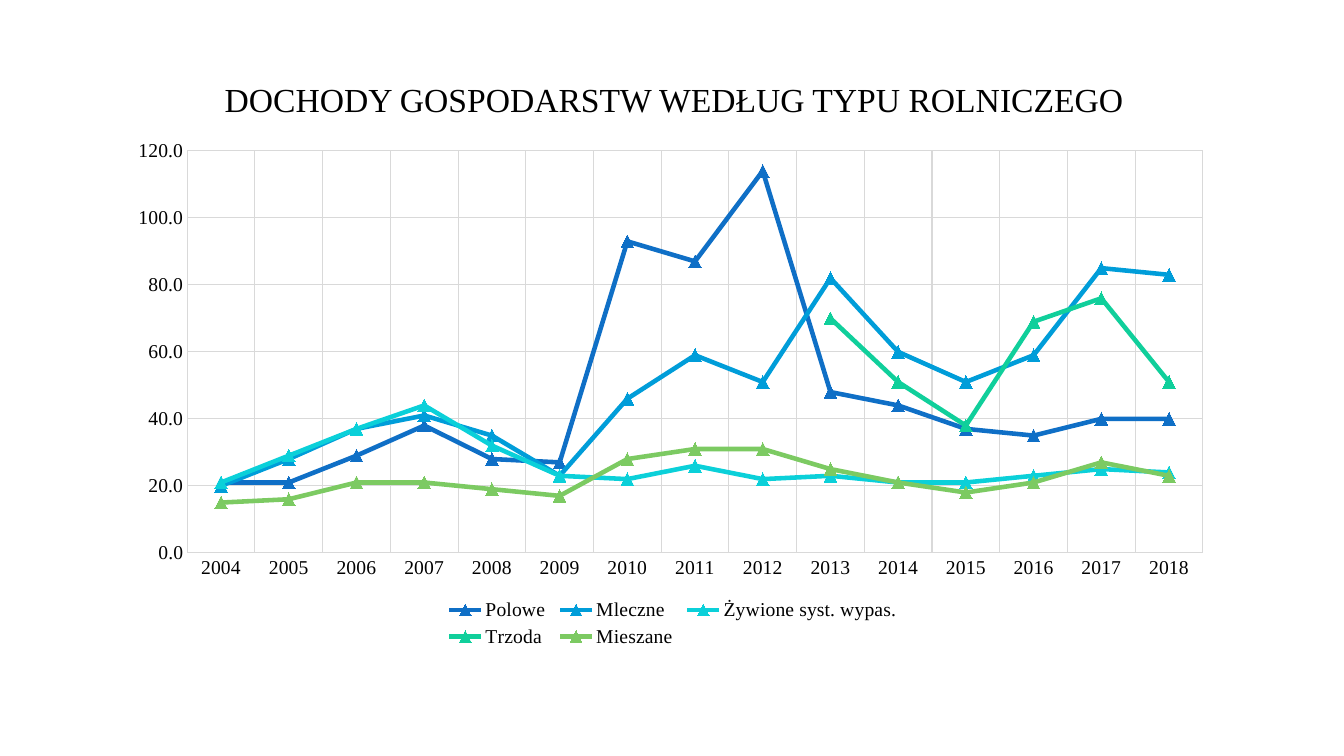
"""Build a slide with a line chart of farm income by type of farming."""
from dataclasses import dataclass

from pptx import Presentation
from pptx.chart.data import CategoryChartData
from pptx.dml.color import RGBColor
from pptx.enum.chart import XL_CHART_TYPE as ChartType
from pptx.enum.chart import XL_LEGEND_POSITION as LegendPosition
from pptx.enum.chart import XL_MARKER_STYLE as MarkerStyle
from pptx.enum.chart import XL_TICK_MARK as TickMark
from pptx.enum.text import MSO_ANCHOR, PP_ALIGN
from pptx.oxml import parse_xml
from pptx.oxml.ns import nsdecls, qn
from pptx.util import Inches, Pt

HEADING = "DOCHODY GOSPODARSTW WEDŁUG TYPU ROLNICZEGO"
YEARS = [str(year) for year in range(2004, 2019)]
INCOMES = {
    "Polowe": (21, 21, 29, 38, 28, 27, 93, 87, 114, 48, 44, 37, 35, 40, 40),
    "Mleczne": (20, 28, 37, 41, 35, 23, 46, 59, 51, 82, 60, 51, 59, 85, 83),
    "Żywione syst. wypas.": (21, 29, 37, 44, 32, 23, 22, 26, 22, 23, 21, 21, 23, 25, 24),
    "Trzoda": (None,) * 9 + (70, 51, 38, 69, 76, 51),
    "Mieszane": (15, 16, 21, 21, 19, 17, 28, 31, 31, 25, 21, 18, 21, 27, 23),
}
SLIDE_SIZE = (13.33, 7.5)
HEADING_BOX = (1.13, 0.73, 10.77, 0.5)
CHART_BOX = (1.2, 1.29, 10.95, 5.18)
PLOT_SHARE = (0.06, 0.04, 0.92, 0.77)
LEGEND_SHARE = (0.29, 0.89, 0.42, 0.11)


@dataclass(frozen=True)
class Theme:
    font: str = "Times New Roman"
    base_font: str = "Cabin"
    text: str = "000000"
    grid: str = "D9D9D9"
    lines: tuple = ("0F6FC6", "009DD9", "0BD0D9", "10CF9B", "7CCA62")
    heading_size: int = 24
    label_size: int = 14
    base_size: int = 10
    grid_width: float = 0.75
    line_width: float = 3.25
    marker_size: int = 9


THEME = Theme()


def set_font(font, size, name=THEME.font):
    font.name, font.size, font.bold = name, Pt(size), False
    font.color.rgb = RGBColor.from_string(THEME.text)


def set_line(line, color, width):
    line.color.rgb = RGBColor.from_string(color)
    line.width = Pt(width)


def place_part(parent, index, share, inner=False):
    for old in parent.findall(qn("c:layout")):
        parent.remove(old)
    target = '<c:layoutTarget val="inner"/>' if inner else ""
    modes = '<c:xMode val="edge"/><c:yMode val="edge"/>'
    sizes = "".join(f'<c:{key} val="{part}"/>' for key, part in zip("xywh", share))
    parent.insert(index, parse_xml(
        f'<c:layout {nsdecls("c")}><c:manualLayout>{target}{modes}{sizes}'
        "</c:manualLayout></c:layout>"))


def add_heading(slide):
    heading = slide.shapes.title
    heading.left, heading.top, heading.width, heading.height = map(Inches, HEADING_BOX)
    frame = heading.text_frame
    frame.margin_left = Inches(0.44)
    frame.vertical_anchor = MSO_ANCHOR.MIDDLE
    paragraph = frame.paragraphs[0]
    paragraph.alignment = PP_ALIGN.CENTER
    run = paragraph.add_run()
    run.text = HEADING
    set_font(run.font, THEME.heading_size)


def style_axes(chart):
    for axis in (chart.category_axis, chart.value_axis):
        axis.major_tick_mark = axis.minor_tick_mark = TickMark.NONE
        axis.has_major_gridlines = True
        set_line(axis.major_gridlines.format.line, THEME.grid, THEME.grid_width)
        set_font(axis.tick_labels.font, THEME.label_size)
    set_line(chart.category_axis.format.line, THEME.grid, THEME.grid_width)
    incomes = chart.value_axis
    incomes.format.line.fill.background()
    incomes.minimum_scale, incomes.maximum_scale, incomes.major_unit = 0, 120, 20
    incomes.tick_labels.number_format = "0.0"
    incomes.tick_labels.number_format_is_linked = False


def add_income_chart(slide):
    data = CategoryChartData()
    data.categories = YEARS
    for farm_type, values in INCOMES.items():
        data.add_series(farm_type, values)
    chart = slide.shapes.add_chart(
        ChartType.LINE_MARKERS, *map(Inches, CHART_BOX), data).chart
    chart.has_title = False
    set_font(chart.font, THEME.base_size, THEME.base_font)
    style_axes(chart)
    chart.plots[0].vary_by_categories = False
    for series, color in zip(chart.plots[0].series, THEME.lines):
        series.smooth = False
        set_line(series.format.line, color, THEME.line_width)
        marker = series.marker
        marker.style, marker.size = MarkerStyle.TRIANGLE, THEME.marker_size
        marker.format.fill.solid()
        marker.format.fill.fore_color.rgb = RGBColor.from_string(color)
        set_line(marker.format.line, color, THEME.grid_width)
    chart.has_legend = True
    chart.legend.position = LegendPosition.BOTTOM
    chart.legend.include_in_layout = False
    set_font(chart.legend.font, THEME.label_size)
    root = chart.element
    place_part(root.find(".//" + qn("c:plotArea")), 0, PLOT_SHARE, inner=True)
    place_part(root.find(".//" + qn("c:legend")), 1, LEGEND_SHARE)


def main():
    deck = Presentation()
    deck.slide_width, deck.slide_height = map(Inches, SLIDE_SIZE)
    slide = deck.slides.add_slide(deck.slide_layouts[5])
    add_heading(slide)
    add_income_chart(slide)
    deck.save("out.pptx")


if __name__ == "__main__":
    main()
